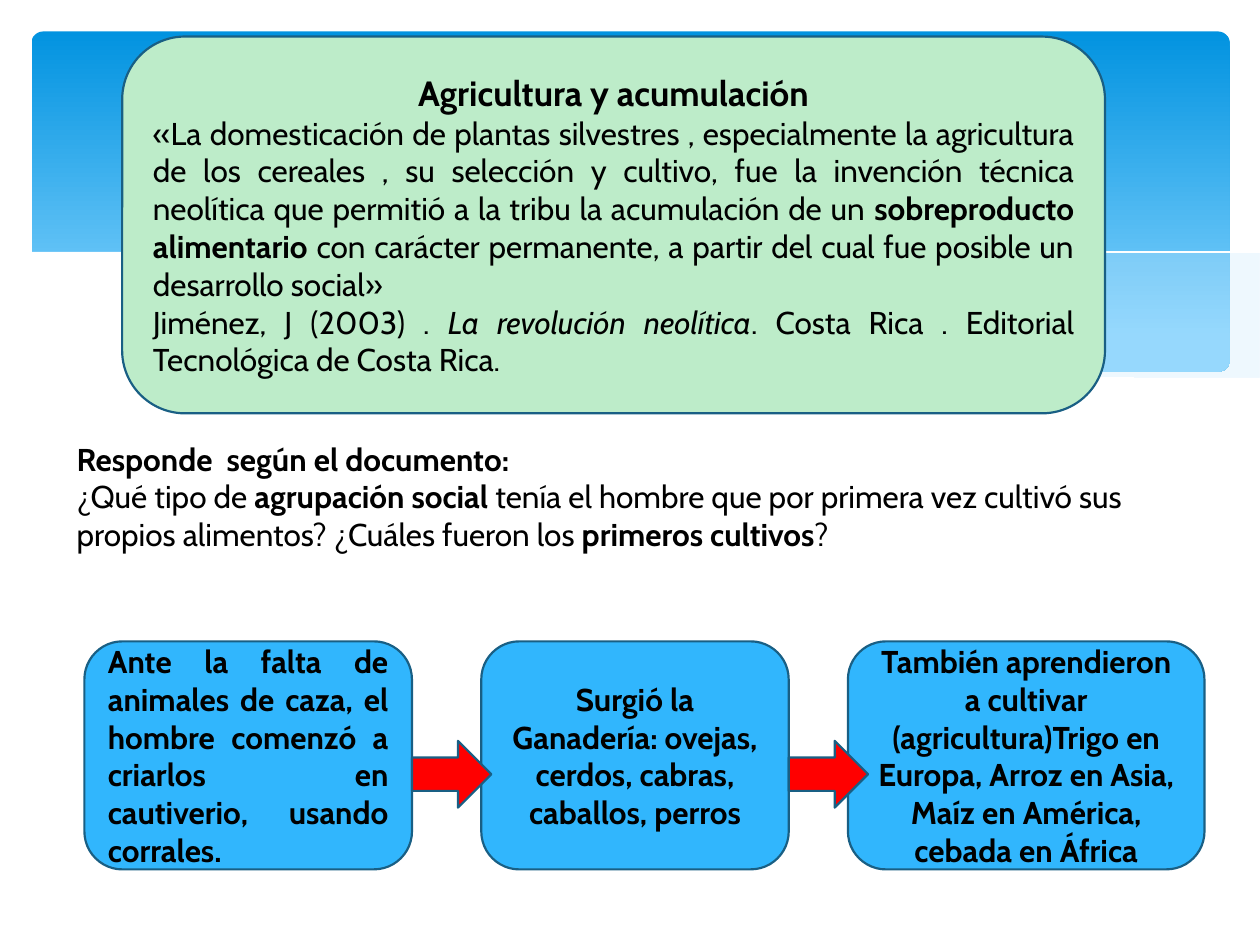
from lxml.etree import SubElement
from pptx import Presentation
from pptx.dml.color import RGBColor
from pptx.enum.shapes import MSO_SHAPE
from pptx.enum.text import MSO_ANCHOR, PP_ALIGN
from pptx.oxml.ns import qn
from pptx.util import Inches, Pt

BLACK = RGBColor(0x00, 0x00, 0x00)
WHITE = RGBColor(0xFF, 0xFF, 0xFF)
SKY_TOP = RGBColor(0x02, 0x93, 0xE0)
SKY_BOTTOM = RGBColor(0x83, 0xD3, 0xFE)
MIST = RGBColor(0xC6, 0xE7, 0xFC)
GREEN = RGBColor(0xBD, 0xEC, 0xC9)
BLUE = RGBColor(0x31, 0xB6, 0xFD)
RED = RGBColor(0xFF, 0x00, 0x00)
OUTLINE = RGBColor(0x19, 0x5F, 0x84)

CENTER, JUSTIFY, LEFT = PP_ALIGN.CENTER, PP_ALIGN.JUSTIFY, PP_ALIGN.LEFT

# A paragraph is (alignment, size, runs); a run is (text, style), style "", "b" or "i".
QUOTE = [
    (CENTER, 20, [("Agricultura y acumulación", "b")]),
    (JUSTIFY, 18, [
        ("«La domesticación de plantas silvestres , especialmente la agricultura de los "
         "cereales , su selección y cultivo, fue la invención técnica neolítica que "
         "permitió a la tribu la acumulación de un ", ""),
        ("sobreproducto alimentario ", "b"),
        ("con carácter permanente, a partir del cual fue posible un desarrollo social»", "")]),
    (JUSTIFY, 18, [
        ("Jiménez, J (2003) . ", ""), ("La revolución neolítica", "i"),
        (". Costa Rica . Editorial Tecnológica de Costa Rica.", "")]),
]
QUESTION = [
    (LEFT, 18, [("Responde  según el documento:", "b")]),
    (LEFT, 18, [
        ("¿Qué tipo de ", ""), ("agrupación social ", "b"),
        ("tenía el hombre que por primera vez cultivó sus propios alimentos? "
         "¿Cuáles fueron los ", ""),
        ("primeros cultivos", "b"), ("?", "")]),
]
# left, width, alignment, text
STEPS = [
    (0.67, 2.6, JUSTIFY, "Ante la falta de animales de caza, el hombre comenzó a criarlos "
                         "en cautiverio, usando corrales."),
    (3.82, 2.44, CENTER, "Surgió la Ganadería: ovejas, cerdos, cabras, caballos, perros"),
    (6.73, 2.83, CENTER, "También aprendieron a cultivar (agricultura)Trigo en Europa, "
                         "Arroz en Asia, Maíz en América, cebada en África"),
]
STEP_TOP, STEP_HEIGHT = 5.09, 1.81
ARROW_WIDTH, ARROW_HEIGHT = 0.63, 0.53

# Each wave is a list of edges; an edge is a smooth curve through its knots.
# Waves: edges, fill, opacity in percent (no fill means a thin white line)
WAVES = [
    ([[(9.76, 2), (9.21, 2.1), (8.61, 2.23), (7.53, 2.48), (6.61, 2.65)],
      [(6.61, 2.65), (7.32, 2.74), (8.03, 2.78), (8.72, 2.74), (9.28, 2.63), (9.76, 2.47)]],
     MIST, 29),
    ([[(8.93, 2.73), (8.07, 2.6), (7.06, 2.4), (6.29, 2.22), (5.41, 2.03), (4.65, 1.91),
       (3.8, 1.85), (2.86, 1.91)],
      [(2.86, 1.91), (3.62, 2.03), (4.49, 2.22), (5.66, 2.48), (6.5, 2.64), (7.36, 2.75),
       (8.18, 2.78), (8.93, 2.73)]], MIST, 40),
    ([[(3.09, 1.95), (3.63, 1.89), (4.33, 1.87), (5.1, 1.92), (6.08, 2.04), (6.95, 2.19),
       (7.95, 2.41), (9.07, 2.72)]], None, 100),
    ([[(6.13, 2.57), (6.95, 2.35), (7.76, 2.16), (8.66, 1.99), (9.24, 1.9), (9.75, 1.85)]],
     None, 100),
    ([[(9.77, 2.46), (9.3, 2.62), (8.75, 2.73), (8.09, 2.77), (7.26, 2.72), (6.48, 2.62),
       (5.55, 2.45), (4.47, 2.2), (3.4, 1.97), (2.5, 1.86), (1.77, 1.84), (1.19, 1.87),
       (0.67, 1.97), (0.23, 2.13)], [(0.23, 3.29), (9.77, 3.29)]], WHITE, 100),
]


def smooth(knots, steps=6):
    """Return points of a Catmull-Rom curve through the knots."""
    padded = [knots[0], *knots, knots[-1]]
    points = [knots[0]]
    for a, b, c, d in zip(padded, padded[1:], padded[2:], padded[3:]):
        for t in (step / steps for step in range(1, steps + 1)):
            points.append(tuple(
                q + t / 2 * (r - p + t * (2 * p - 5 * q + 4 * r - s + t * (3 * (q - r) + s - p)))
                for p, q, r, s in zip(a, b, c, d)))
    return points


def add_wave(page, edges, fill, opacity):
    points = [point for edge in edges for point in smooth(edge)]
    builder = page.shapes.build_freeform(*points[0], scale=Inches(1))
    builder.add_line_segments(points[1:], close=fill is not None)
    wave = builder.convert_to_shape()
    wave.shadow.inherit = False
    if fill is None:
        wave.fill.background()
        wave.line.color.rgb = WHITE
        wave.line.width = Pt(0)
        return
    wave.fill.solid()
    wave.fill.fore_color.rgb = fill
    wave.line.fill.background()
    if opacity < 100:
        color = wave.fill._xPr.find(qn("a:solidFill"))[0]
        SubElement(color, qn("a:alpha"), val=str(opacity * 1000))


def add_sky(page):
    sky = page.shapes.add_shape(MSO_SHAPE.ROUNDED_RECTANGLE, *map(Inches, (0.25, 0.25, 9.51, 2.7)))
    sky.adjustments[0] = 0.034
    sky.shadow.inherit = False
    sky.line.fill.background()
    sky.fill.gradient()
    sky.fill.gradient_angle = 270
    for stop, color, position in zip(sky.fill.gradient_stops, (SKY_TOP, SKY_BOTTOM), (0, 0.9)):
        stop.color.rgb = color
        stop.position = position


def add_outlined(page, preset, place, fill):
    shape = page.shapes.add_shape(preset, *map(Inches, place))
    shape.shadow.inherit = False
    shape.fill.solid()
    shape.fill.fore_color.rgb = fill
    shape.line.color.rgb = OUTLINE
    shape.line.width = Pt(1.25)
    return shape


def write(box, paragraphs, anchor=MSO_ANCHOR.MIDDLE):
    frame = box.text_frame
    frame.word_wrap = True
    frame.vertical_anchor = anchor
    for index, (alignment, size, runs) in enumerate(paragraphs):
        para = frame.paragraphs[0] if index == 0 else frame.add_paragraph()
        para.alignment = alignment
        for text, style in runs:
            span = para.add_run()
            span.text = text
            span.font.name = "Cabin"
            span.font.size = Pt(size)
            span.font.color.rgb = BLACK
            span.font.bold = style == "b"
            span.font.italic = style == "i"


def main():
    deck = Presentation()
    deck.slide_width, deck.slide_height = Inches(10), Inches(7.5)
    page = deck.slides.add_slide(deck.slide_layouts[6])

    add_sky(page)
    for wave in WAVES:
        add_wave(page, *wave)

    card = add_outlined(page, MSO_SHAPE.ROUNDED_RECTANGLE, (0.97, 0.29, 7.8, 2.99), GREEN)
    write(card, QUOTE)
    # A hanging indent moves the centred heading slightly to the left
    heading = card.text_frame.paragraphs[0]
    heading._p.get_or_add_pPr().set("indent", str(Inches(-0.32)))

    question = page.shapes.add_textbox(*map(Inches, (0.51, 3.44, 8.74, 1.01)))
    write(question, QUESTION, anchor=MSO_ANCHOR.TOP)

    for left, width, alignment, text in STEPS:
        step = add_outlined(page, MSO_SHAPE.ROUNDED_RECTANGLE,
                            (left, STEP_TOP, width, STEP_HEIGHT), BLUE)
        write(step, [(alignment, 18, [(text, "b")])])
    arrow_top = 5.88
    for left, width, *_ in STEPS[:-1]:
        add_outlined(page, MSO_SHAPE.RIGHT_ARROW,
                     (left + width, arrow_top, ARROW_WIDTH, ARROW_HEIGHT), RED)

    deck.save("out.pptx")


if __name__ == "__main__":
    main()
